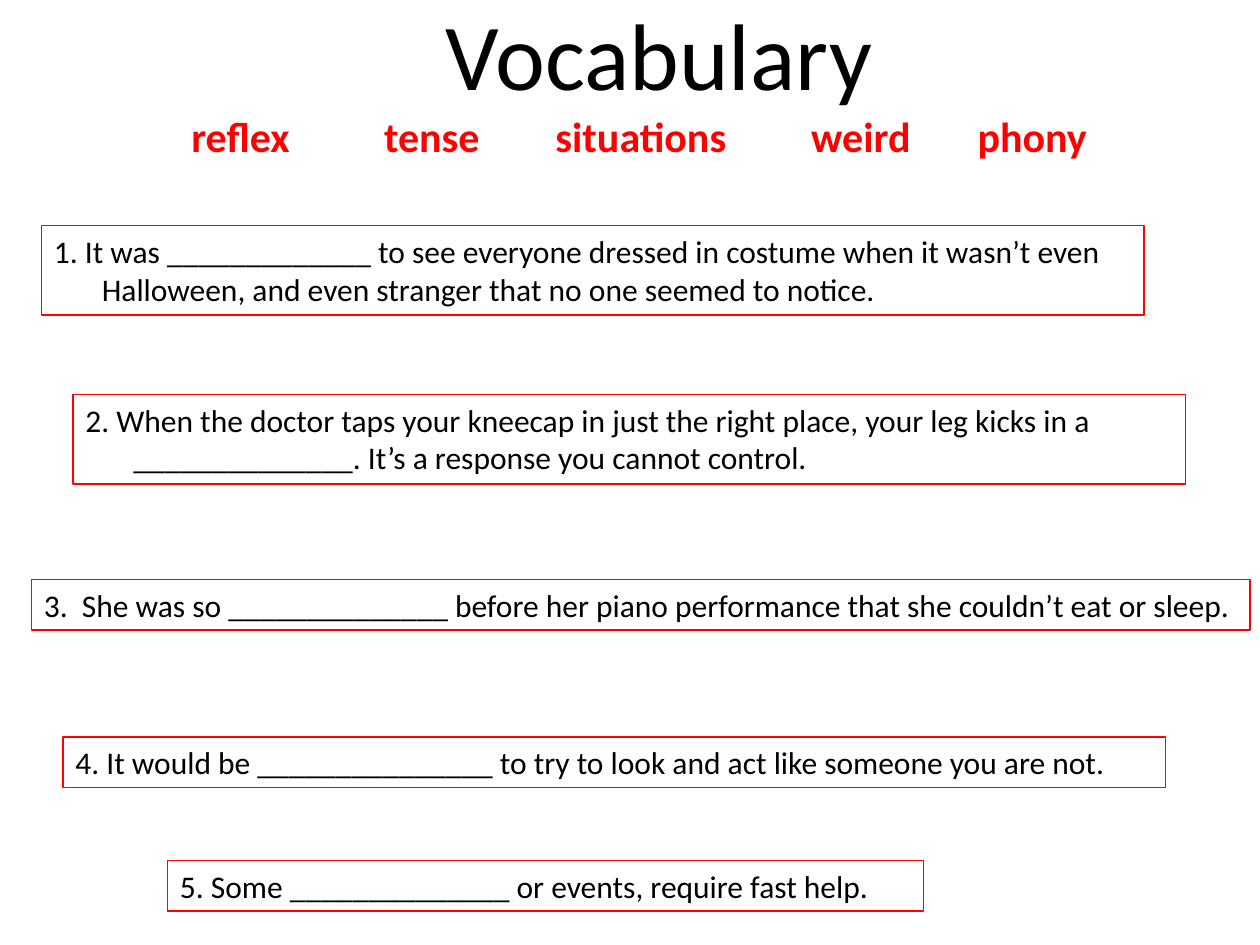
from lxml import etree
from pptx import Presentation
from pptx.dml.color import RGBColor
from pptx.enum.text import PP_ALIGN
from pptx.oxml.ns import qn
from pptx.util import Inches, Pt

CENTER = PP_ALIGN.CENTER
FONT = "Calibri"
COLORS = {"text": "000000", "accent": "FF0000"}
HANGING_INDENT = 0.38

WORDS = ["reflex", "tense", "situations", "weird", "phony"]
WORD_STOPS = [1.53, 2.89, 4.92, 6.24]

SENTENCES = [
    (0.33, 1.79, 8.75, 0.71, True,
     "1. It was _____________ to see everyone dressed in costume when it wasn’t even "
     "Halloween, and even stranger that no one seemed to notice."),
    (0.58, 3.13, 8.83, 0.71, True,
     "2. When the doctor taps your kneecap in just the right place, your leg kicks in a "
     "______________. It’s a response you cannot control."),
    (0.25, 4.6, 9.67, 0.4, False,
     "3.  She was so ______________ before her piano performance that she couldn’t eat or sleep."),
    (0.5, 5.85, 8.75, 0.4, False,
     "4. It would be _______________ to try to look and act like someone you are not."),
    (1.33, 6.83, 6, 0.4, False,
     "5. Some ______________ or events, require fast help."),
]


def rgb(name):
    """Return the named palette colour."""
    return RGBColor.from_string(COLORS[name])


def add_text(slide, left, top, width, height, text, wrap=True):
    """Add a text box and return it with its only paragraph."""
    box = slide.shapes.add_textbox(Inches(left), Inches(top), Inches(width), Inches(height))
    box.text_frame.word_wrap = wrap
    paragraph = box.text_frame.paragraphs[0]
    paragraph.text = text
    return box, paragraph


def set_font(paragraph, size, color, bold=False):
    """Set the font of a whole paragraph."""
    font = paragraph.font
    font.name = FONT
    font.size = Pt(size)
    font.bold = bold
    font.color.rgb = rgb(color)


def add_title(slide):
    """Add the centred heading."""
    _, title = add_text(slide, 3.42, -0.08, 3.62, 1.01, "Vocabulary", wrap=False)
    title.alignment = CENTER
    set_font(title, 54, "text")


def add_word_bank(slide):
    """Add the vocabulary words on one line, spaced by tab stops."""
    _, words = add_text(slide, 1.42, 0.83, 7.33, 0.5, "\t".join(WORDS))
    stops = etree.SubElement(words._p.get_or_add_pPr(), qn("a:tabLst"))
    for stop in WORD_STOPS:
        etree.SubElement(stops, qn("a:tab"), pos=str(Inches(stop)), algn="l")
    set_font(words, 24, "accent", bold=True)


def add_sentence(slide, left, top, width, height, hanging, text):
    """Add an outlined sentence with a blank to fill in."""
    box, sentence = add_text(slide, left, top, width, height, text)
    box.line.color.rgb = rgb("accent")
    box.line.width = Pt(1)
    if hanging:
        properties = sentence._p.get_or_add_pPr()
        properties.set("marL", str(Inches(HANGING_INDENT)))
        properties.set("indent", str(-Inches(HANGING_INDENT)))
    set_font(sentence, 18, "text")


def main():
    """Build the vocabulary slide."""
    deck = Presentation()
    deck.slide_width, deck.slide_height = Inches(10), Inches(7.5)
    slide = deck.slides.add_slide(deck.slide_layouts[6])
    add_word_bank(slide)
    for sentence in SENTENCES:
        add_sentence(slide, *sentence)
    add_title(slide)
    deck.save("out.pptx")


if __name__ == "__main__":
    main()
